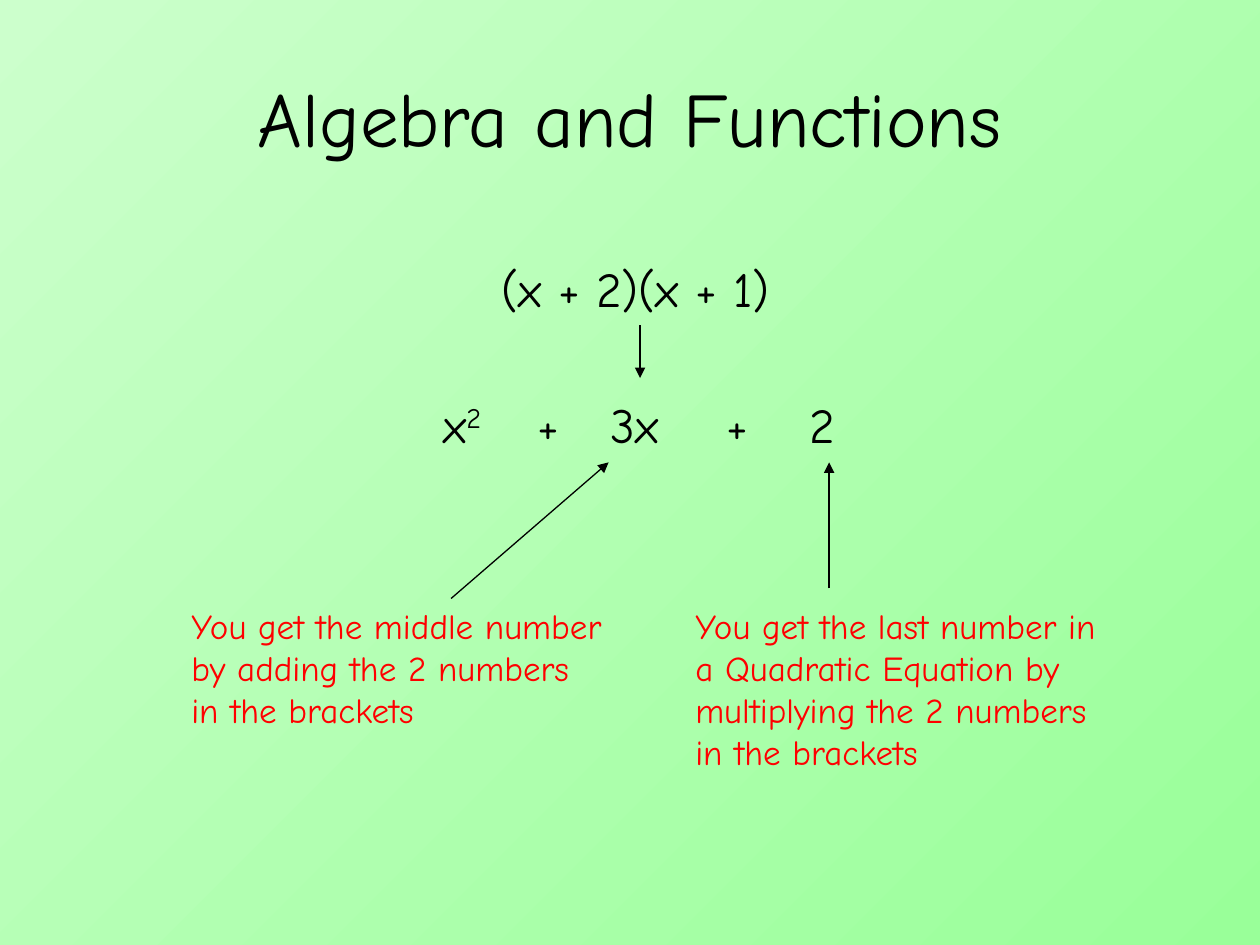
from pptx import Presentation
from pptx.dml.color import RGBColor
from pptx.enum.shapes import MSO_CONNECTOR
from pptx.enum.text import MSO_ANCHOR, PP_ALIGN
from pptx.oxml.ns import qn
from pptx.util import Inches, Pt
from lxml import etree

STRAIGHT = MSO_CONNECTOR.STRAIGHT
LEFT, CENTER = PP_ALIGN.LEFT, PP_ALIGN.CENTER
TOP, MIDDLE = MSO_ANCHOR.TOP, MSO_ANCHOR.MIDDLE

FONT = "Comic Neue"
COLORS = {
    "text": "000000",
    "note": "FF0000",
    "background_start": "CCFFCC",
    "background_end": "99FF99",
}


def color(name):
    return RGBColor.from_string(COLORS[name])


def set_background(page):
    fill = page.background.fill
    fill.gradient()
    fill.gradient_angle = 315  # counter-clockwise: top left to bottom right
    for stop, name in zip(fill.gradient_stops, ("background_start", "background_end")):
        stop.color.rgb = color(name)


def style_span(span, size, color_name):
    span.font.name = FONT
    span.font.size = Pt(size)
    span.font.color.rgb = color(color_name)


def add_text(page, text, left, top, width, height, size=28,
             color_name="text", align=LEFT, anchor=TOP):
    box = page.shapes.add_textbox(Inches(left), Inches(top), Inches(width), Inches(height))
    frame = box.text_frame
    frame.word_wrap = True
    frame.vertical_anchor = anchor
    frame.text = text
    paragraph = frame.paragraphs[0]
    paragraph.alignment = align
    style_span(paragraph.runs[0], size, color_name)
    return paragraph


def add_superscript(paragraph, text, size=28, color_name="text"):
    span = paragraph.add_run()
    span.text = text
    style_span(span, size, color_name)
    span.font._element.set("baseline", "30000")


def add_arrow(page, start, end):
    arrow = page.shapes.add_connector(STRAIGHT, *map(Inches, start + end))
    arrow.line.color.rgb = color("text")
    arrow.line.width = Pt(0.75)
    etree.SubElement(arrow.line._get_or_add_ln(), qn("a:tailEnd"), type="triangle")
    etree.SubElement(arrow._element.spPr, qn("a:effectLst"))


def main():
    deck = Presentation()
    deck.slide_width, deck.slide_height = Inches(10), Inches(7.5)
    page = deck.slides.add_slide(deck.slide_layouts[6])
    set_background(page)

    # Title and factorised expression
    add_text(page, "Algebra and Functions", 0.5, 0.3, 9, 1.25,
             size=44, align=CENTER, anchor=MIDDLE)
    add_text(page, "(x + 2)(x + 1)", 3.42, 2, 3.25, 0.57, align=CENTER)

    # Expanded expression, term by term
    terms = [("x", 3.42, 0.75), ("+", 4.17, 0.42), ("3x", 4.75, 0.75),
             ("+", 5.67, 0.33), ("2", 6.33, 0.42)]
    for text, left, width in terms:
        paragraph = add_text(page, text, left, 3.08, width, 0.57)
        if text == "x":
            add_superscript(paragraph, "2")

    # Explanations of the middle and last numbers
    notes = [
        ("You get the middle number by adding the 2 numbers in the brackets", 1.42, 1.1),
        ("You get the last number in a Quadratic Equation by multiplying "
         "the 2 numbers in the brackets", 5.42, 1.43),
    ]
    for text, left, height in notes:
        add_text(page, text, left, 4.75, 3.5, height, size=20, color_name="note")

    # Arrows: expansion step, then each note to its term
    add_arrow(page, (5.08, 2.58), (5.08, 3))
    add_arrow(page, (3.58, 4.75), (4.83, 3.67))
    add_arrow(page, (6.58, 4.67), (6.58, 3.67))

    deck.save("out.pptx")


if __name__ == "__main__":
    main()
